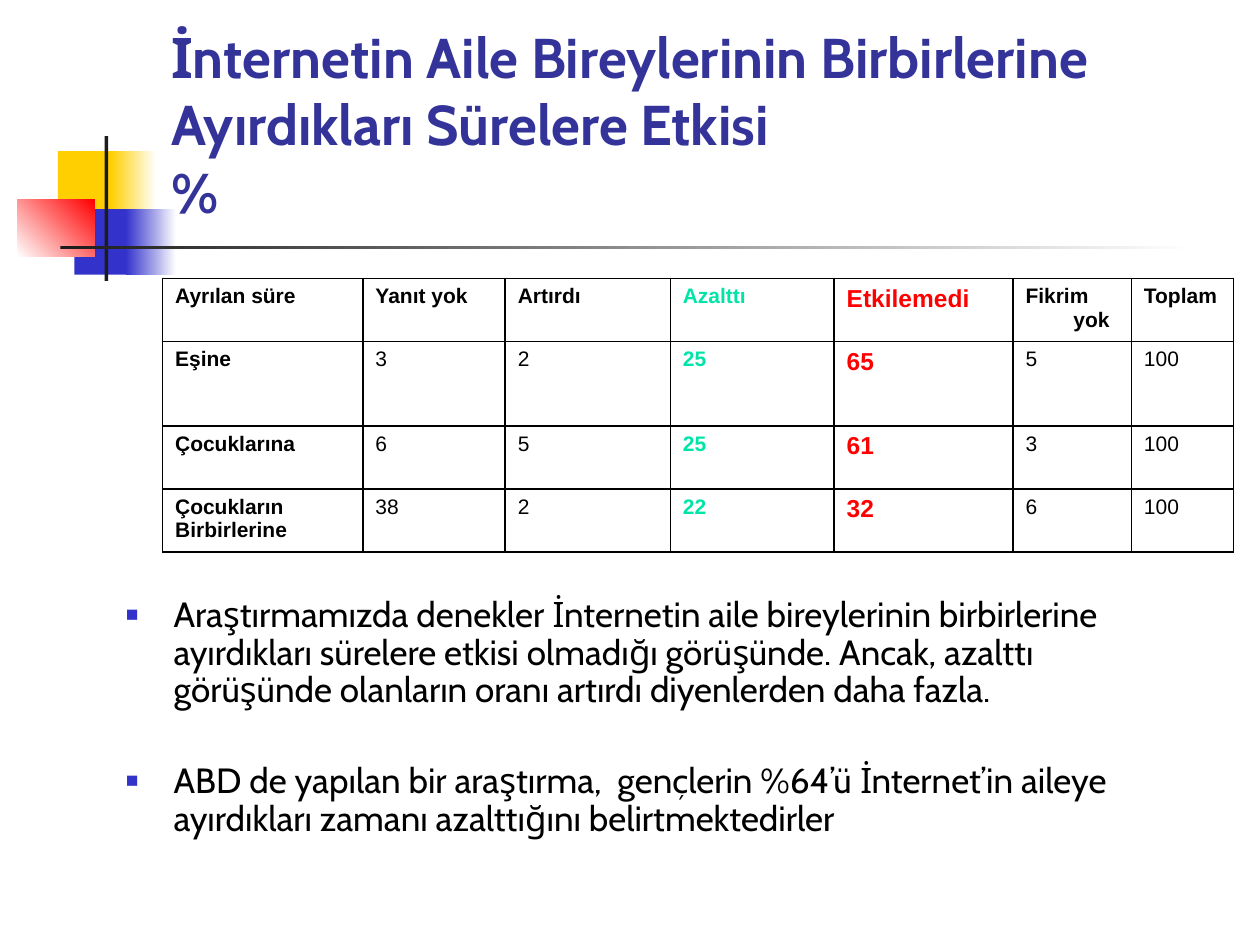
from dataclasses import dataclass

from lxml.etree import SubElement
from pptx import Presentation
from pptx.dml.color import RGBColor
from pptx.enum.shapes import MSO_SHAPE
from pptx.enum.text import MSO_ANCHOR, PP_ALIGN
from pptx.oxml.ns import qn
from pptx.util import Inches, Pt


@dataclass(frozen=True)
class Theme:
    head: str = "Cabin"
    cell: str = "Arial"
    ink: str = "000000"
    title: str = "333399"
    blue: str = "3333CC"
    gold: str = "FFCF01"
    red: str = "FF0000"
    mint: str = "00E4A8"
    dark: str = "1C1C1C"
    white: str = "FFFFFF"
    big: int = 32
    body: int = 20
    mid: int = 14
    small: int = 12


T = Theme()
INDENT = Inches(0.38)

ROWS = [
    ["Ayrılan süre", "Yanıt yok", "Artırdı", "Azalttı", "Etkilemedi",
     "Fikrim yok", "Toplam"],
    ["Eşine", "3", "2", "25", "65", "5", "100"],
    ["Çocuklarına", "6", "5", "25", "61", "3", "100"],
    ["Çocukların\nBirbirlerine", "38", "2", "22", "32", "6", "100"],
]
WIDTHS = [1.59, 1.13, 1.31, 1.3, 1.42, 0.94, 0.81]
HEIGHTS = [0.47, 0.67, 0.5, 0.49]
POINTS = [
    "Araştırmamızda denekler İnternetin aile bireylerinin birbirlerine "
    "ayırdıkları sürelere etkisi olmadığı görüşünde. Ancak, azalttı "
    "görüşünde olanların oranı artırdı diyenlerden daha fazla.",
    "ABD de yapılan bir araştırma,  gençlerin %64’ü İnternet’in aileye "
    "ayırdıkları zamanı azalttığını belirtmektedirler",
]


def assign(item, values):
    for name, value in values.items():
        setattr(item, name, value)


def style(font, name, size, color, bold=False):
    assign(font, {"name": name, "size": Pt(size), "bold": bold})
    font.color.rgb = RGBColor.from_string(color)


def hang(para):
    """Give the paragraph a hanging indent and return its properties."""
    props = para._p.get_or_add_pPr()
    props.set("marL", str(INDENT))
    props.set("indent", str(-INDENT))
    return props


def add_block(slide, box, colors, angle=0):
    """Add a plain block, or a gradient one when given two colours."""
    block = slide.shapes.add_shape(MSO_SHAPE.RECTANGLE, *map(Inches, box))
    block.shadow.inherit = False
    block.line.fill.background()
    if len(colors) == 1:
        block.fill.solid()
        block.fill.fore_color.rgb = RGBColor.from_string(colors[0])
        return
    block.fill.gradient()
    block.fill.gradient_angle = angle
    for stop, color, place in zip(block.fill.gradient_stops, colors, (0, 1)):
        stop.color.rgb = RGBColor.from_string(color)
        stop.position = place


def add_motif(slide, left, top):
    blocks = [
        ((0.32, 0.12, 0.48, 0.52), [T.gold], 0),
        ((0.74, 0.12, 0.36, 0.52), [T.gold, T.white], 0),
        ((0.45, 0.58, 0.46, 0.52), [T.blue], 0),
        ((0.86, 0.58, 0.4, 0.52), [T.blue, T.white], 0),
        ((0, 0.5, 0.61, 0.46), [T.white, T.red], 45),
        ((0.69, 0, 0.03, 1.15), [T.dark], 0),
        ((0.34, 0.87, 9, 0.03), [T.dark, T.white], 0),
    ]
    for (x, y, wide, high), colors, angle in blocks:
        add_block(slide, (left + x, top + y, wide, high), colors, angle)


def add_frame(slide, box, anchor):
    frame = slide.shapes.add_textbox(*map(Inches, box)).text_frame
    assign(frame, {"word_wrap": True, "vertical_anchor": anchor})
    return frame


def add_title(slide, box):
    para = add_frame(slide, box, MSO_ANCHOR.BOTTOM).paragraphs[0]
    para.text = ("İnternetin Aile Bireylerinin Birbirlerine "
                 "Ayırdıkları Sürelere Etkisi\v%")
    for run in para.runs:
        style(run.font, T.head, T.big, T.title, True)


def add_border(cell):
    props = cell._tc.get_or_add_tcPr()
    for spot, side in enumerate(("lnL", "lnR", "lnT", "lnB")):
        line = props.makeelement(qn(f"a:{side}"), {"w": str(Pt(1))})
        fill = SubElement(line, qn("a:solidFill"))
        SubElement(fill, qn("a:srgbClr"), val=T.ink)
        props.insert(spot, line)


def fill_cell(cell, text, row, col):
    color, size = {3: (T.mint, T.small), 4: (T.red, T.mid)}.get(
        col, (T.ink, T.small))
    cell.text = text
    cell.fill.background()
    add_border(cell)
    for para in cell.text_frame.paragraphs:
        hang(para)
        if (row, col) != (0, 2):
            para.alignment = PP_ALIGN.JUSTIFY
        style(para.runs[0].font, T.cell, size, color,
              row == 0 or col in (0, 3, 4))


def add_grid(slide, left, top):
    size = (left, top, sum(WIDTHS), sum(HEIGHTS))
    table = slide.shapes.add_table(
        len(ROWS), len(WIDTHS), *map(Inches, size)).table
    assign(table, {"first_row": False, "horz_banding": False})
    for col, wide in zip(table.columns, WIDTHS):
        col.width = Inches(wide)
    for row, high in zip(table.rows, HEIGHTS):
        row.height = Inches(high)
    for row, texts in enumerate(ROWS):
        for col, text in enumerate(texts):
            fill_cell(table.cell(row, col), text, row, col)


def add_bullet(para):
    props = hang(para)
    color = SubElement(props, qn("a:buClr"))
    SubElement(color, qn("a:srgbClr"), val=T.blue)
    SubElement(props, qn("a:buSzPct"), val="60000")
    SubElement(props, qn("a:buFont"), typeface=T.cell)
    SubElement(props, qn("a:buChar"), char="■")


def add_points(slide, box):
    frame = add_frame(slide, box, MSO_ANCHOR.TOP)
    frame.text = "\n".join(POINTS)
    for para, gap in zip(frame.paragraphs, (4, 30)):
        assign(para, {"line_spacing": 0.9, "space_before": Pt(gap)})
        add_bullet(para)
        style(para.runs[0].font, T.head, T.body, T.ink)


def main():
    deck = Presentation()
    assign(deck, {"slide_width": Inches(10), "slide_height": Inches(7.5)})
    slide = deck.slides.add_slide(deck.slide_layouts[6])
    add_motif(slide, 0.14, 1.08)
    add_title(slide, (1.26, 0.23, 8.52, 1.6))
    add_grid(slide, 1.29, 2.21)
    add_points(slide, (0.9, 4.69, 8.5, 2.17))
    deck.save("out.pptx")


if __name__ == "__main__":
    main()
